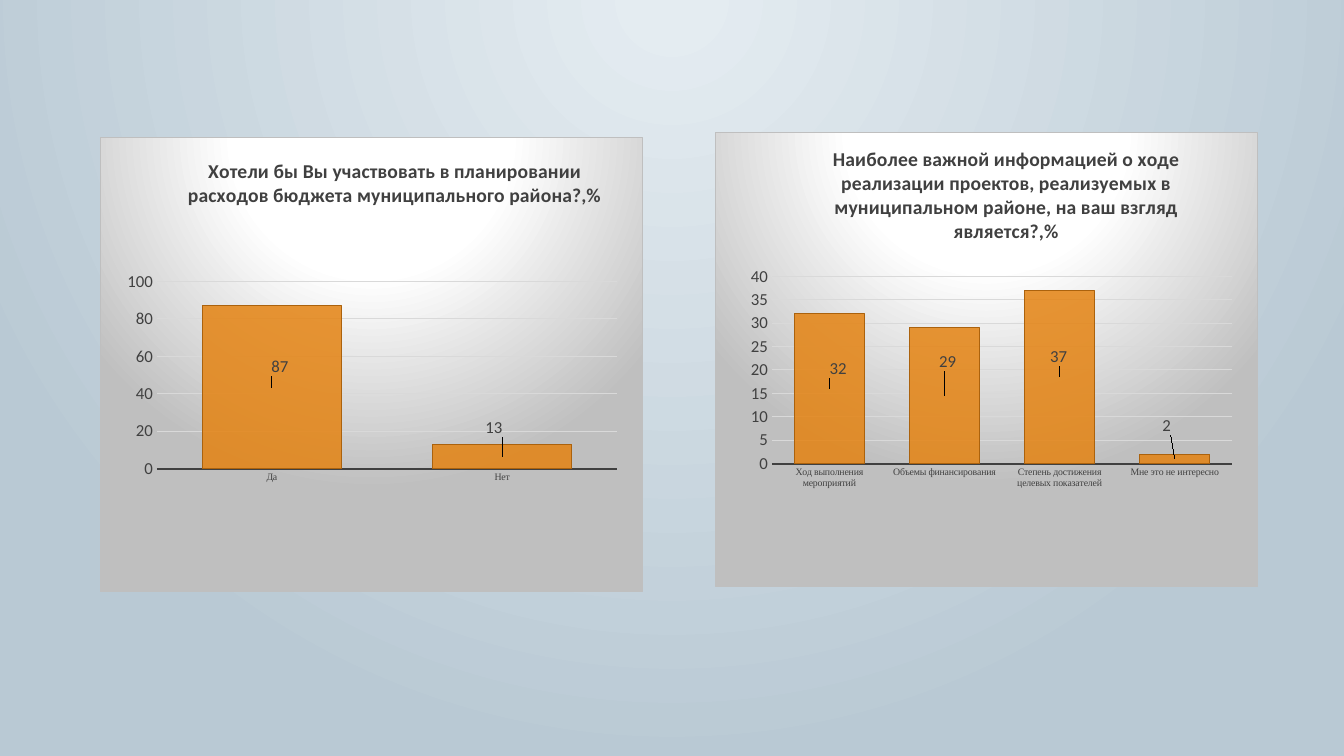
from pptx import Presentation
from pptx.chart.data import CategoryChartData
from pptx.dml.color import RGBColor
from pptx.enum.chart import XL_CHART_TYPE, XL_LABEL_POSITION, XL_TICK_MARK
from pptx.oxml import parse_xml
from pptx.oxml.ns import nsdecls
from pptx.util import Inches, Pt

DARK = RGBColor(0x40, 0x40, 0x40)
BLACK = RGBColor(0, 0, 0)
GRID = RGBColor(0xD9, 0xD9, 0xD9)
ORANGE = RGBColor(0xE4, 0x83, 0x12)
BROWN = RGBColor(0xAB, 0x62, 0x0D)
WHITE = RGBColor(0xFF, 0xFF, 0xFF)
SILVER = RGBColor(0xBF, 0xBF, 0xBF)
BG_LIGHT = RGBColor(0xE4, 0xEC, 0xF1)
BG_BLUE = RGBColor(0xB9, 0xC9, 0xD4)

BODY = {"name": "Calibri", "size": Pt(12), "color": DARK}
SMALL = {"name": "Times New Roman", "size": Pt(7), "color": DARK}
HEADING = {"name": "Calibri", "size": Pt(14), "bold": True, "color": DARK}
PLOT = (0.104, 0.317, 0.849, 0.413)
CHART_SIZE = (5.39, 4.51)

# Each label offset is a fraction of the chart's width and height.
CHARTS = [
    {"box": (7.09, 1.31, *CHART_SIZE),
     "title": "Наиболее важной информацией о ходе реализации проектов, реализуемых в "
              "муниципальном районе, на ваш взгляд является?,%",
     "title_at": (0.21, 0.02),
     "values": {"Ход выполнения мероприятий": 32, "Объемы финансирования": 29,
                "Степень достижения целевых показателей": 37,
                "Мне это не интересно": 2},
     "offsets": [(0.016, -0.044), (0.006, -0.075), (-0.002, -0.044), (-0.015, -0.073)],
     "top": 40, "step": 5},
    {"box": (0.99, 1.36, *CHART_SIZE),
     "title": "Хотели бы Вы участвовать в планировании расходов бюджета "
              "муниципального района?,%",
     "title_at": (0.155, 0.035),
     "values": {"Да": 87, "Нет": 13},
     "offsets": [(0.015, -0.046), (-0.015, -0.064)],
     "top": 100, "step": 20},
]


def set_font(font, formats):
    for key, value in formats.items():
        if key == "color":
            font.color.rgb = value
        else:
            setattr(font, key, value)


def set_line(line, color, width):
    line.color.rgb = color
    line.width = Pt(width)


def radial_fill(stops, rect):
    """Circular gradient; stops and rect are in percent."""
    gs = "".join(f'<a:gs pos="{pos * 1000}"><a:srgbClr val="{color}"/></a:gs>'
                 for pos, color in stops)
    sides = " ".join(f'{side}="{value * 1000}"' for side, value in zip("ltrb", rect))
    return (f'<a:gradFill {nsdecls("a")} rotWithShape="1"><a:gsLst>{gs}</a:gsLst>'
            f'<a:path path="circle"><a:fillToRect {sides}/></a:path></a:gradFill>')


def set_layout(parent, index, place, mode="", target=""):
    """Give a chart part a manual place: x, y and, if given, w, h."""
    for old in parent.xpath("c:layout"):
        parent.remove(old)
    parts = f'<c:layoutTarget val="{target}"/>' if target else ""
    if mode:
        parts += f'<c:xMode val="{mode}"/><c:yMode val="{mode}"/>'
    parts += "".join(f'<c:{key} val="{value}"/>' for key, value in zip("xywh", place))
    parent.insert(index, parse_xml(
        f'<c:layout {nsdecls("c")}><c:manualLayout>{parts}</c:manualLayout></c:layout>'))


def paint_background(s):
    fill = radial_fill([(3, BG_LIGHT), (100, BG_BLUE)], (43, 0, 43, 100))
    s.element.cSld.insert(0, parse_xml(
        f'<p:bg {nsdecls("p", "a")}><p:bgPr>{fill}<a:effectLst/></p:bgPr></p:bg>'))


def paint_chart_area(space):
    fill = radial_fill([(0, WHITE), (39, WHITE), (100, SILVER)], (50, -80, 50, 180))
    space.xpath("c:chart")[0].addnext(parse_xml(
        f'<c:spPr {nsdecls("c", "a")}>{fill}<a:ln w="{Pt(0.75)}"><a:solidFill>'
        f'<a:srgbClr val="{SILVER}"/></a:solidFill></a:ln></c:spPr>'))


def format_axes(chart, top, step):
    cat, val = chart.category_axis, chart.value_axis
    for axis, font in ((cat, SMALL), (val, BODY)):
        axis.major_tick_mark = axis.minor_tick_mark = XL_TICK_MARK.NONE
        set_font(axis.tick_labels.font, font)
    set_line(cat.format.line, DARK, 1.5)
    cat.has_major_gridlines = False
    val.format.line.fill.background()
    val.minimum_scale, val.maximum_scale, val.major_unit = 0, top, step
    set_line(val.major_gridlines.format.line, GRID, 0.75)


def format_bars(plot, offsets):
    plot.gap_width, plot.overlap = 65, 100
    plot.vary_by_categories = False
    bars = plot.series[0]
    bars.format.fill.solid()
    bars.format.fill.fore_color.rgb = ORANGE
    color = bars._element.xpath("c:spPr/a:solidFill/a:srgbClr")[0]
    color.append(parse_xml(f'<a:alpha {nsdecls("a")} val="85000"/>'))
    set_line(bars.format.line, BROWN, 0.75)
    # Value labels, each moved from the middle of its bar
    bars.data_labels.show_value = True
    set_font(bars.data_labels.font, BODY)
    for i in range(len(offsets)):
        label = bars.points[i].data_label
        set_font(label.font, BODY)
        label.position = XL_LABEL_POSITION.CENTER
    for node, offset in zip(bars._element.xpath("c:dLbls/c:dLbl"), offsets):
        set_layout(node, 1, offset)


def add_survey_chart(s, box, title, title_at, values, offsets, top, step):
    data = CategoryChartData()
    data.categories = list(values)
    data.add_series("Series 1", list(values.values()))
    chart = s.shapes.add_chart(XL_CHART_TYPE.COLUMN_STACKED,
                               *map(Inches, box), data).chart
    chart.has_legend = False
    set_font(chart.font, {**BODY, "color": BLACK})
    # Title
    tf = chart.chart_title.text_frame
    tf.text = title
    set_font(tf.paragraphs[0].runs[0].font, HEADING)
    space = chart.element
    set_layout(space.xpath("c:chart/c:title")[0], 1, title_at, "edge")
    # Plot
    set_layout(space.xpath("c:chart/c:plotArea")[0], 0, PLOT, "edge", "inner")
    paint_chart_area(space)
    format_axes(chart, top, step)
    format_bars(chart.plots[0], offsets)


def main():
    prs = Presentation()
    prs.slide_width, prs.slide_height = Inches(13.33), Inches(7.5)
    s = prs.slides.add_slide(prs.slide_layouts[6])
    paint_background(s)
    for survey in CHARTS:
        add_survey_chart(s, **survey)
    prs.save("out.pptx")


if __name__ == "__main__":
    main()
